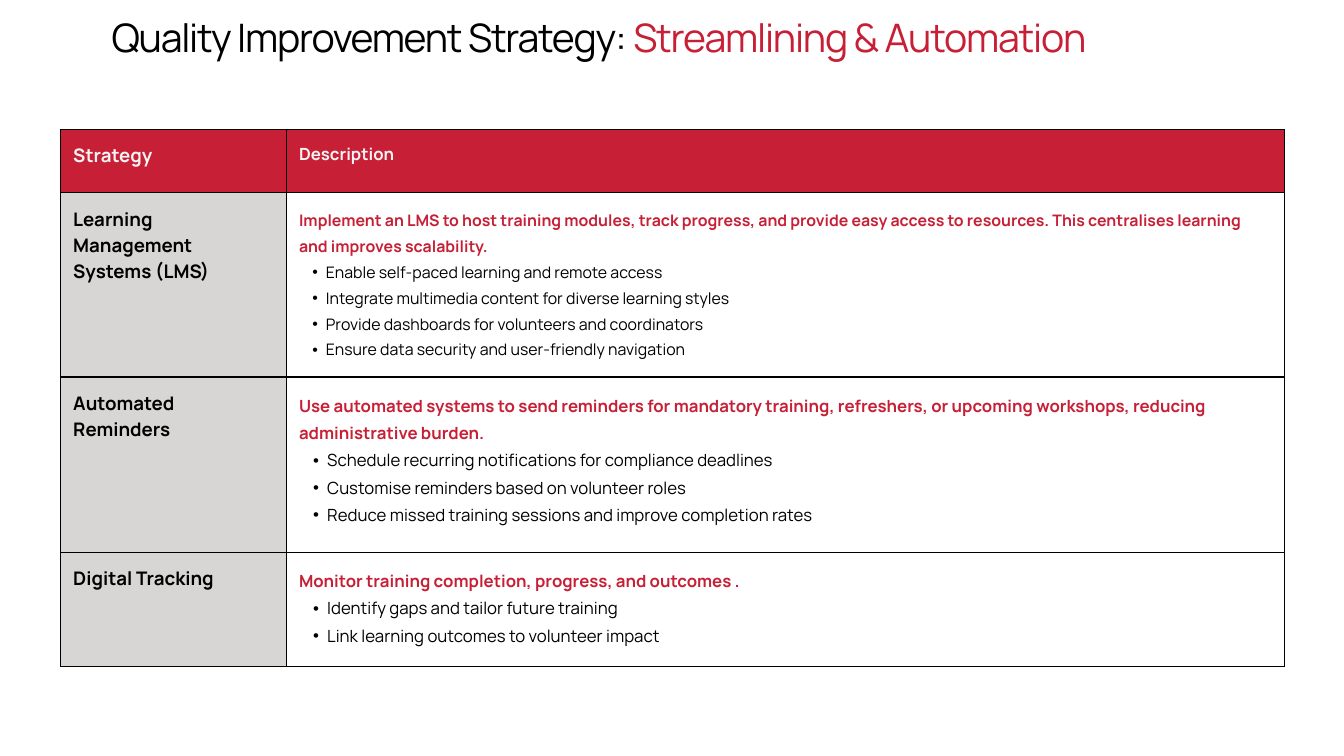
from lxml import etree
from pptx import Presentation
from pptx import util as u
from pptx.dml.color import RGBColor
from pptx.enum import text
from pptx.oxml.ns import qn

BLACK = RGBColor(0x00, 0x00, 0x00)
RED = RGBColor(0xC7, 0x20, 0x36)
GREY = RGBColor(0xD8, 0xD5, 0xD5)
OFF_WHITE = RGBColor(0xF6, 0xF4, 0xF5)

COLUMN_WIDTHS = [3.36, 14.85]
ROW_HEIGHTS = [0.94, 2.74, 2.61, 1.7]

# Name, text size, line spacing, bullet indent, summary, actions
STRATEGIES = [
    ("Learning Management Systems (LMS)", 17, 27.7, 0.4,
     "Implement an LMS to host training modules, track progress, and provide easy access "
     "to resources. This centralises learning and improves scalability.",
     ["Enable self-paced learning and remote access",
      "Integrate multimedia content for diverse learning styles",
      "Provide dashboards for volunteers and coordinators",
      "Ensure data security and user-friendly navigation"]),
    ("Automated Reminders", 18, 29.3, 0.42,
     "Use automated systems to send reminders for mandatory training, refreshers, or "
     "upcoming workshops, reducing administrative burden.",
     ["Schedule recurring notifications for compliance deadlines",
      "Customise reminders based on volunteer roles",
      "Reduce missed training sessions and improve completion rates"]),
    ("Digital Tracking", 18, 29.3, 0.42,
     "Monitor training completion, progress, and outcomes .",
     ["Identify gaps and tailor future training",
      "Link learning outcomes to volunteer impact"]),
]


def add_run(paragraph, content, *, size, color=BLACK, bold=False, font="Manrope",
            line_spacing=None, tracking=None):
    run = paragraph.add_run()
    run.text = content
    run.font.name = font
    run.font.size = u.Pt(size)
    run.font.bold = bold
    run.font.color.rgb = color
    if line_spacing:
        paragraph.line_spacing = u.Pt(line_spacing)
    if tracking:
        run.font._element.set("spc", str(round(tracking * 100)))


def add_bullet(paragraph, indent):
    """Give the paragraph a bullet hanging by half of its indent."""
    paragraph.level = 1
    properties = paragraph._p.get_or_add_pPr()
    properties.set("marL", str(u.Inches(indent)))
    properties.set("indent", str(-u.Inches(indent / 2)))
    etree.SubElement(properties, qn("a:buFont"), typeface="Arial")
    etree.SubElement(properties, qn("a:buChar"), char="•")


class SlideBuilder:
    def __init__(self, slide, border_color=BLACK, border_width=1.5, cell_margin=0.19):
        self.slide = slide
        self.border_color = border_color
        self.border_width = border_width
        self.cell_margin = cell_margin

    def title(self, left, top, width, height, parts):
        box = self.slide.shapes.add_textbox(*map(u.Inches, (left, top, width, height)))
        frame = box.text_frame
        frame.word_wrap = True
        frame.auto_size = text.MSO_AUTO_SIZE.SHAPE_TO_FIT_TEXT
        frame.margin_left = frame.margin_right = frame.margin_top = frame.margin_bottom = 0
        for content, color in parts:
            add_run(frame.paragraphs[0], content, size=42, color=color,
                    line_spacing=63, tracking=-1.3)

    def table(self, left, top, column_widths, row_heights):
        frame = self.slide.shapes.add_table(
            len(row_heights), len(column_widths), u.Inches(left), u.Inches(top),
            u.Inches(sum(column_widths)), u.Inches(sum(row_heights)))
        table = frame.table
        table.first_row = table.horz_banding = False
        for column, width in zip(table.columns, column_widths):
            column.width = u.Inches(width)
        for row, height in zip(table.rows, row_heights):
            row.height = u.Inches(height)
        return table

    def cell(self, cell, fill=None):
        """Style a cell and return its first paragraph."""
        margin = u.Inches(self.cell_margin)
        cell.margin_left = cell.margin_right = cell.margin_top = cell.margin_bottom = margin
        cell.vertical_anchor = text.MSO_ANCHOR.TOP
        properties = cell._tc.get_or_add_tcPr()
        for side in ("lnL", "lnR", "lnT", "lnB"):
            line = etree.SubElement(properties, qn(f"a:{side}"),
                                    w=str(u.Pt(self.border_width)))
            solid = etree.SubElement(line, qn("a:solidFill"))
            etree.SubElement(solid, qn("a:srgbClr"), val=str(self.border_color))
        if fill is None:
            cell.fill.background()
        else:
            cell.fill.solid()
            cell.fill.fore_color.rgb = fill
        return cell.text_frame.paragraphs[0]


def main():
    presentation = Presentation()
    presentation.slide_width = u.Inches(20)
    presentation.slide_height = u.Inches(11.25)
    builder = SlideBuilder(presentation.slides.add_slide(presentation.slide_layouts[6]))

    table = builder.table(0.9, 1.93, COLUMN_WIDTHS, ROW_HEIGHTS)
    headings = [("Strategy", 20, 28), ("Description", 18, 25.2)]
    for column, (heading, size, spacing) in enumerate(headings):
        add_run(builder.cell(table.cell(0, column), RED), heading, size=size,
                color=OFF_WHITE, bold=True, line_spacing=spacing)

    for row, (name, size, spacing, indent, summary, actions) in enumerate(STRATEGIES, 1):
        add_run(builder.cell(table.cell(row, 0), GREY), name, size=20, bold=True,
                line_spacing=28)
        description = table.cell(row, 1)
        add_run(builder.cell(description), summary, size=size, color=RED, bold=True,
                line_spacing=spacing)
        for action in actions:
            paragraph = description.text_frame.add_paragraph()
            add_run(paragraph, action, size=size, line_spacing=spacing)
            add_bullet(paragraph, indent)

    builder.title(1.66, 0.02, 16.67, 0.88, [
        ("Quality Improvement Strategy: ", BLACK),
        ("Streamlining & Automation", RED)])
    presentation.save("out.pptx")


if __name__ == "__main__":
    main()
